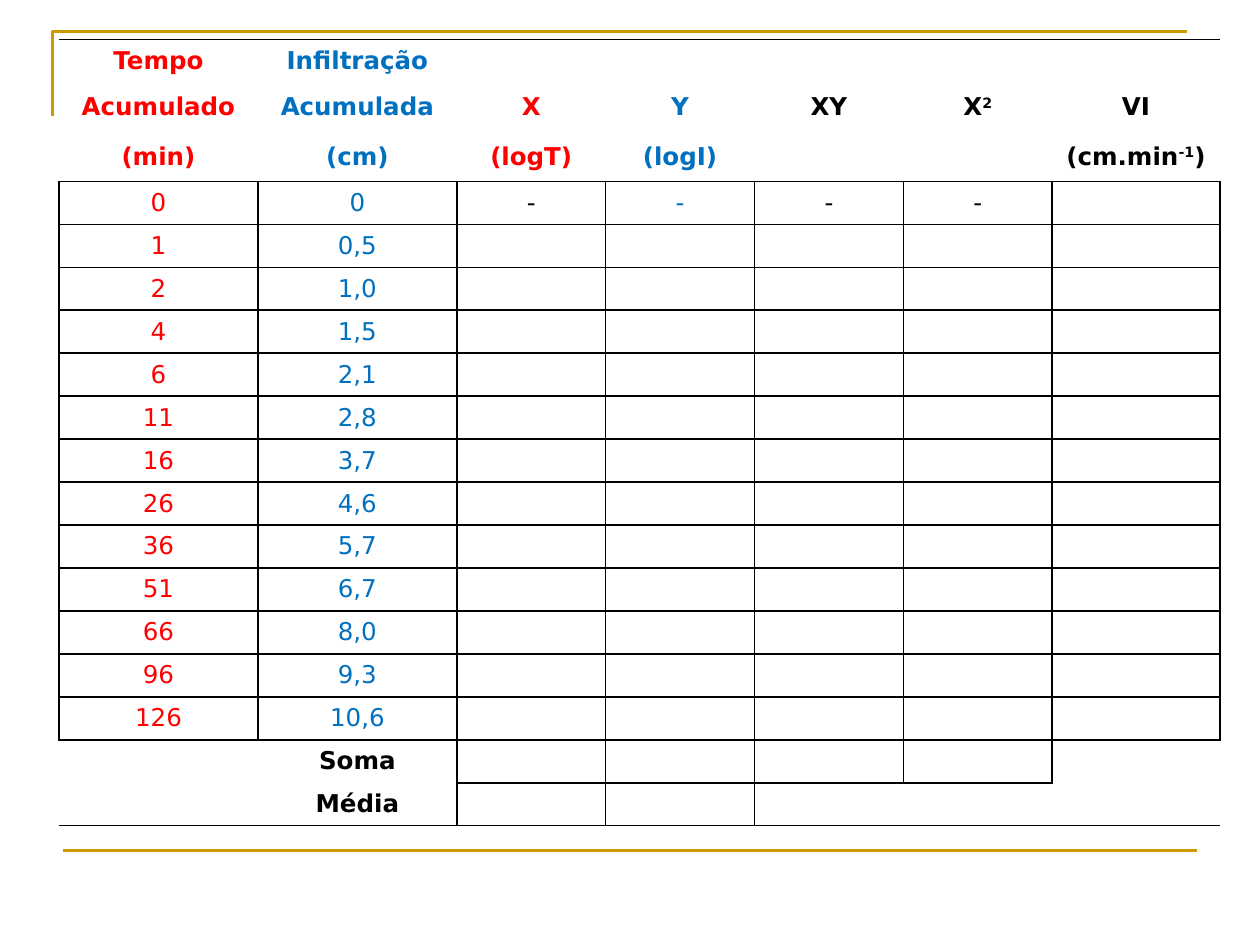
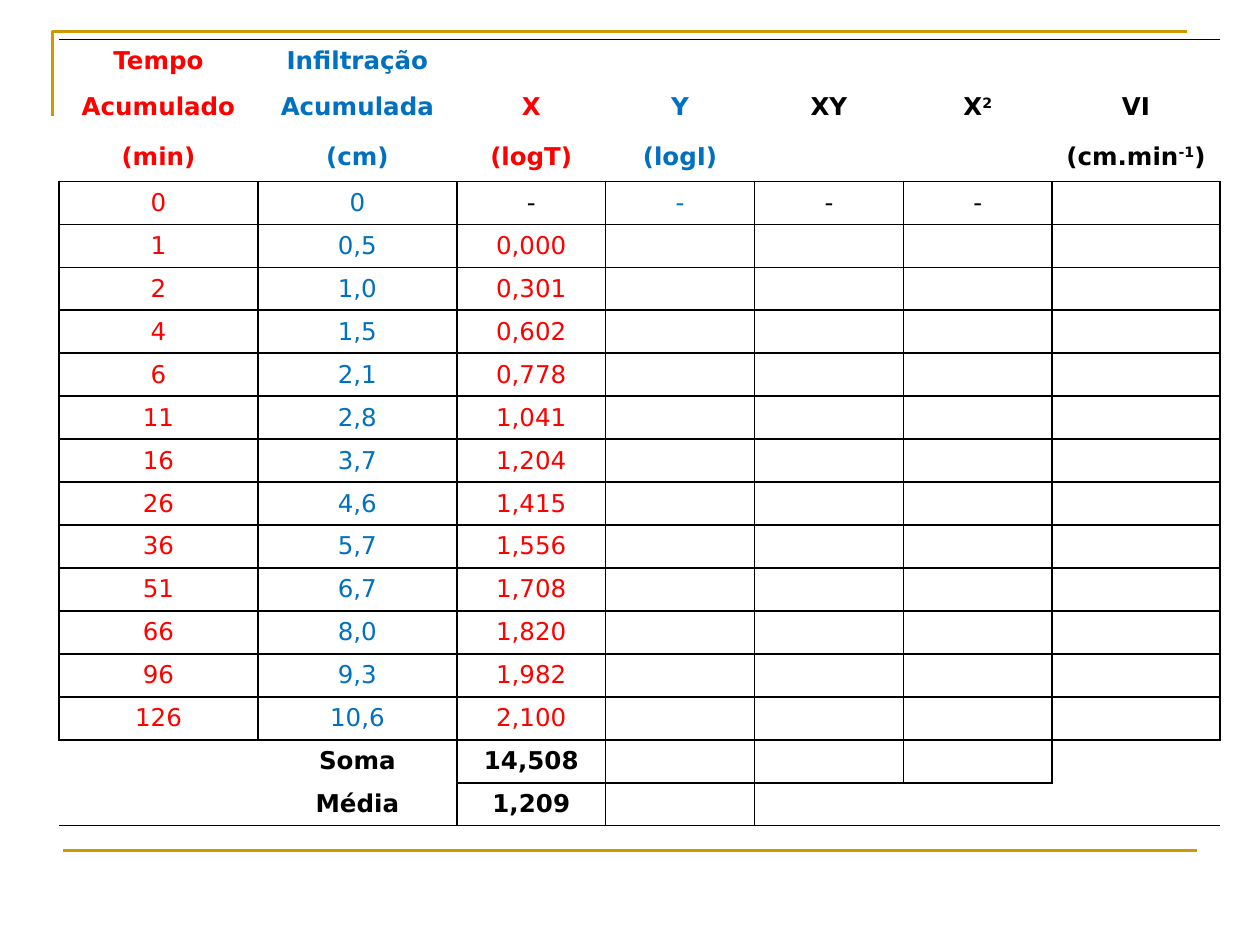
from pptx import Presentation
from pptx.dml.color import RGBColor
from pptx.enum.shapes import MSO_CONNECTOR
from pptx.enum.text import MSO_ANCHOR, PP_ALIGN
from pptx.oxml.ns import qn
from pptx.util import Cm, Pt
from lxml.etree import SubElement

RED = RGBColor(0xFF, 0x00, 0x00)
BLUE = RGBColor(0x00, 0x70, 0xC0)
BLACK = RGBColor(0x00, 0x00, 0x00)
GOLD = RGBColor(0xCC, 0x99, 0x00)
FONT = "DejaVu Sans"
NO_STYLE = "{2D5ABB26-0587-4C30-8999-92F81FD0307C}"

COLUMN_COLORS = [RED, BLUE, RED, BLUE, BLACK, BLACK, BLACK]
COLUMN_WIDTHS = [Cm(4.01)] * 2 + [Cm(3)] * 4 + [Cm(3.38)]
TABLE_HEIGHT = Cm(15.87)
TALL_ROW = Cm(1)
TALL_ROWS = (1, 2)

HEADERS = [
    ["Tempo", "Infiltração", "", "", "", "", ""],
    ["Acumulado", "Acumulada", "X", "Y", "XY", "X^2", "VI"],
    ["(min)", "(cm)", "(logT)", "(logI)", "", "", "(cm.min^-1^)"],
]
TIMES = ["0", "1", "2", "4", "6", "11", "16", "26", "36", "51", "66", "96", "126"]
INFILTRATIONS = ["0", "0,5", "1,0", "1,5", "2,1", "2,8", "3,7", "4,6", "5,7",
                 "6,7", "8,0", "9,3", "10,6"]
LOG_TIMES = ["0,000", "0,301", "0,602", "0,778", "1,041", "1,204", "1,415",
             "1,556", "1,708", "1,820", "1,982", "2,100"]
FIRST_DATA = len(HEADERS)
SUM_ROW = FIRST_DATA + len(TIMES)
MEAN_ROW = SUM_ROW + 1
ROW_COUNT = MEAN_ROW + 1
COLUMN_COUNT = len(COLUMN_WIDTHS)


def is_framed(row, column):
    if row == SUM_ROW:
        return 2 <= column <= 5
    if row == MEAN_ROW:
        return 2 <= column <= 3
    return FIRST_DATA <= row < SUM_ROW and 0 <= column < COLUMN_COUNT


def add_border(cell, side, width):
    line = SubElement(cell._tc.get_or_add_tcPr(), qn(f"a:ln{side}"), w=str(Pt(width)))
    if width:
        fill = SubElement(line, qn("a:solidFill"))
        SubElement(fill, qn("a:srgbClr"), val=str(BLACK))
    else:
        SubElement(line, qn("a:noFill"))


deck = Presentation()
deck.slide_width = Cm(25.4)
deck.slide_height = Cm(19.05)

pages = [
    ([""] * len(LOG_TIMES), "", ""),
    (LOG_TIMES, "14,508", "1,209"),
]

for logs, log_sum, log_mean in pages:
    page = deck.slides.add_slide(deck.slide_layouts[6])

    outline = page.shapes.build_freeform(Cm(1.06), Cm(2.33))
    outline.add_line_segments(
        [(Cm(1.06), Cm(0.63)), (Cm(23.92), Cm(0.63))], close=False)
    corner = outline.convert_to_shape()
    corner.shadow.inherit = False
    corner.fill.background()
    footer = page.shapes.add_connector(
        MSO_CONNECTOR.STRAIGHT, Cm(1.27), Cm(17.15), Cm(24.13), Cm(17.15))
    SubElement(footer._element.spPr, qn("a:effectLst"))
    for rule in (corner, footer):
        rule.line.color.rgb = GOLD
        rule.line.width = Pt(1.5)

    rows = HEADERS + [[time, depth, log, "", "", "", ""] for time, depth, log
                      in zip(TIMES, INFILTRATIONS, ["-"] + logs)]
    rows[FIRST_DATA][3:6] = ["-"] * 3
    rows += [["", "Soma", log_sum, "", "", "", ""],
             ["", "Média", log_mean, "", "", "", ""]]

    frame = page.shapes.add_table(ROW_COUNT, COLUMN_COUNT, Cm(1.19), Cm(0.79),
                                  sum(COLUMN_WIDTHS), TABLE_HEIGHT)
    table = frame.table
    table.first_row = False
    table.horz_banding = False
    table._tbl.tblPr.find(qn("a:tableStyleId")).text = NO_STYLE
    for column, width in enumerate(COLUMN_WIDTHS):
        table.columns[column].width = width
    plain_row = (TABLE_HEIGHT - len(TALL_ROWS) * TALL_ROW) // (ROW_COUNT - len(TALL_ROWS))

    for row, texts in enumerate(rows):
        table.rows[row].height = TALL_ROW if row in TALL_ROWS else plain_row
        for column, text in enumerate(texts):
            cell = table.cell(row, column)
            cell.margin_left = cell.margin_right = 0
            cell.margin_top = cell.margin_bottom = 0
            cell.vertical_anchor = MSO_ANCHOR.MIDDLE

            neighbours = {"L": (row, column - 1), "R": (row, column + 1),
                          "T": (row - 1, column), "B": (row + 1, column)}
            for side, neighbour in neighbours.items():
                if is_framed(row, column) or is_framed(*neighbour):
                    width = 1
                elif neighbour[0] in (-1, ROW_COUNT):
                    width = 0.5
                else:
                    width = 0
                add_border(cell, side, width)
            cell.fill.background()

            para = cell.text_frame.paragraphs[0]
            para.alignment = PP_ALIGN.CENTER
            para.font.name = FONT
            para.font.size = Pt(14)
            para.font.bold = row < FIRST_DATA or row >= SUM_ROW
            is_black = row >= SUM_ROW or (row, column) == (FIRST_DATA, 2)
            para.font.color.rgb = BLACK if is_black else COLUMN_COLORS[column]
            for index, part in enumerate(text.split("^")):
                if part:
                    span = para.add_run()
                    span.text = part
                    if index % 2:
                        span.font._element.set("baseline", "30000")

deck.save("out.pptx")
